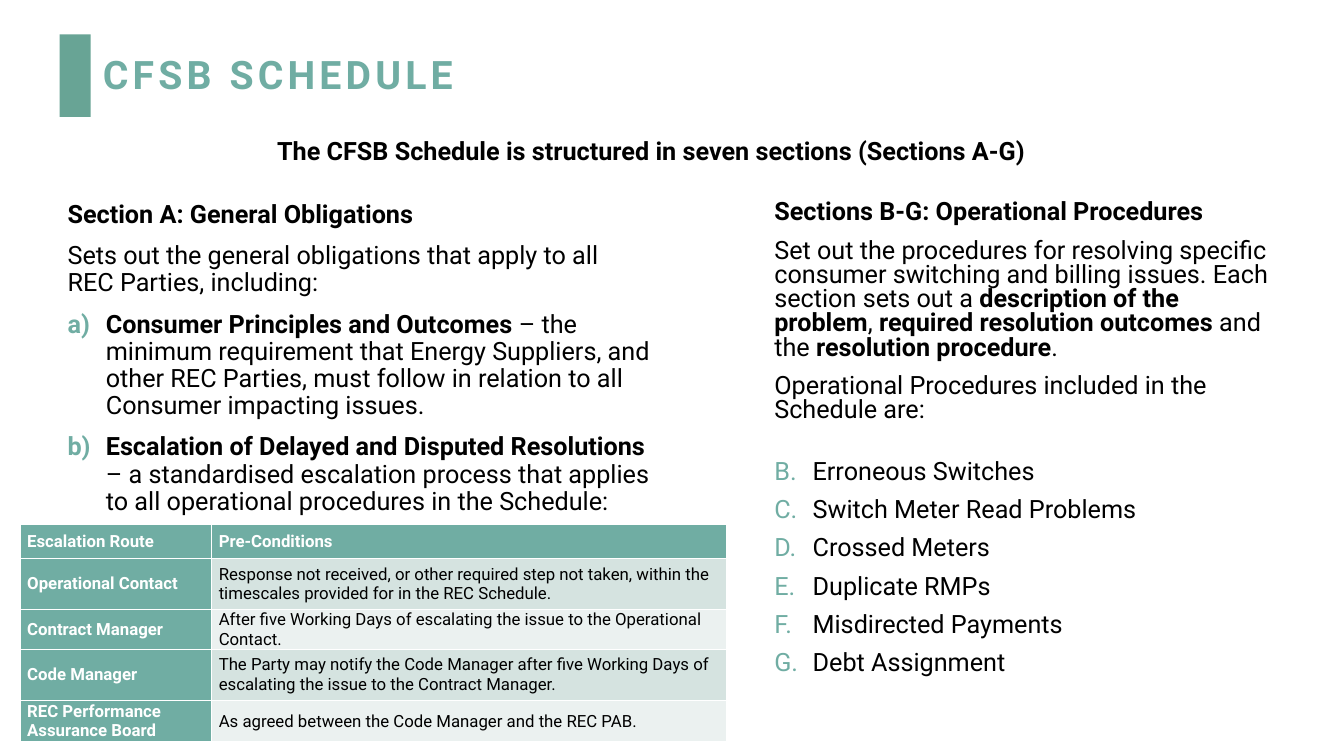
"""Builds the CFSB Schedule slide with its section texts and escalation table."""
from lxml import etree
from pptx import Presentation, util as u
from pptx.dml.color import RGBColor
from pptx.enum import shapes, text
from pptx.oxml import ns

PX = 9144
FONT = "Roboto"
COLORS = {
    "accent": "68A495",
    "teal": "70ADA3",
    "band_dark": "D5E3E0",
    "band_light": "EBF1F0",
    "black": "000000",
    "white": "FFFFFF",
}
BODY_SIZE = 18
HANGING = 38

SECTION_A = [
    ([("Section A: General Obligations", True)], None),
    ([("Sets out the general obligations that apply to all REC Parties, including:", False)], None),
    ([("Consumer Principles and Outcomes", True),
      (" – the minimum requirement that Energy Suppliers, and other REC Parties, must follow "
       "in relation to all Consumer impacting issues.", False)], ("alphaLcParenR", 1)),
    ([("Escalation of Delayed and Disputed Resolutions", True),
      (" – a standardised escalation process that applies to all operational procedures "
       "in the Schedule:", False)], ("alphaLcParenR", 1)),
]
PROCEDURES = ["Erroneous Switches", "Switch Meter Read Problems", "Crossed Meters",
              "Duplicate RMPs", "Misdirected Payments", "Debt Assignment"]
SECTIONS_B_TO_G = [
    ([("Sections B-G: Operational Procedures", True)], None),
    ([("Set out the procedures for resolving specific consumer switching and billing issues. "
       "Each section sets out a ", False),
      ("description of the problem", True), (", ", False),
      ("required resolution outcomes ", True), ("and the ", False),
      ("resolution procedure", True), (".", False)], None),
    ([("Operational Procedures included in the Schedule are:", False)], None),
] + [([(procedure, False)], ("alphaUcPeriod", 2)) for procedure in PROCEDURES]

ESCALATION = [
    ("Escalation Route", "Pre-Conditions"),
    ("Operational Contact", "Response not received, or other required step not taken, "
     "within the timescales provided for in the REC Schedule."),
    ("Contract Manager", "After five Working Days of escalating the issue to the "
     "Operational Contact."),
    ("Code Manager", "The Party may notify the Code Manager after five Working Days of "
     "escalating the issue to the Contract Manager."),
    ("REC Performance Assurance Board", "As agreed between the Code Manager and the REC PAB."),
]
COLUMN_WIDTHS = [190, 511]
ROW_HEIGHTS = [34, 51, 36, 51, 41]


def px(*lengths):
    return [u.Emu(length * PX) for length in lengths]


def color(name):
    return RGBColor.from_string(COLORS[name])


def place(shape, left, top, width, height):
    shape.left, shape.top, shape.width, shape.height = px(left, top, width, height)


def set_font(paragraph, size, color_name, bold=None):
    font = paragraph.font
    font.name, font.size, font.bold = FONT, u.Pt(size), bold
    font.color.rgb = color(color_name)


def set_bullet(paragraph, numbering):
    properties = paragraph._p.get_or_add_pPr()
    indent = HANGING * PX if numbering else 0
    properties.set("marL", str(indent))
    properties.set("indent", str(-indent))
    if not numbering:
        etree.SubElement(properties, ns.qn("a:buNone"))
        return
    style, start = numbering
    bullet_color = etree.SubElement(properties, ns.qn("a:buClr"))
    etree.SubElement(bullet_color, ns.qn("a:srgbClr"), val=COLORS["teal"])
    etree.SubElement(properties, ns.qn("a:buFont"), typeface="+mj-lt")
    etree.SubElement(properties, ns.qn("a:buAutoNum"), type=style, startAt=str(start))


def fill_body(shape, content, line_spacing, list_gap=10):
    frame = shape.text_frame
    frame.word_wrap = True
    frame.auto_size = text.MSO_AUTO_SIZE.NONE
    previous = None
    for index, (runs, numbering) in enumerate(content):
        paragraph = frame.paragraphs[0] if index == 0 else frame.add_paragraph()
        starts_list = numbering and not previous
        paragraph.line_spacing = line_spacing
        paragraph.space_before = u.Pt(0 if index == 0 else list_gap if starts_list else 10)
        set_bullet(paragraph, numbering)
        set_font(paragraph, BODY_SIZE, "black")
        for words, bold in runs:
            run = paragraph.add_run()
            run.text, run.font.bold = words, bold
        previous = numbering


def add_accent(slide):
    bar = slide.shapes.add_shape(shapes.MSO_SHAPE.RECTANGLE, *px(59, 34, 31, 82))
    bar.shadow.inherit = False
    bar.fill.solid()
    bar.fill.fore_color.rgb = color("accent")
    bar.line.fill.background()


def fill_title(title):
    place(title, 92, 40, 1015, 72)
    frame = title.text_frame
    frame.auto_size = text.MSO_AUTO_SIZE.NONE
    frame.vertical_anchor = text.MSO_ANCHOR.MIDDLE
    paragraph = frame.paragraphs[0]
    paragraph.alignment = text.PP_ALIGN.LEFT
    paragraph.line_spacing = 0.9
    set_font(paragraph, 28, "teal", True)
    run = paragraph.add_run()
    run.text = "CFSB SCHEDULE"
    run._r.get_or_add_rPr().set("spc", "300")


def fill_cell(cell, words, fill, font_color, bold):
    cell.fill.solid()
    cell.fill.fore_color.rgb = color(fill)
    cell.vertical_anchor = text.MSO_ANCHOR.MIDDLE
    cell.margin_left, cell.margin_right, cell.margin_top, cell.margin_bottom = px(7, 7, 0, 0)
    cell.text = words
    set_font(cell.text_frame.paragraphs[0], 12, font_color, bold)


def add_escalation_table(slide):
    table = slide.shapes.add_table(
        len(ESCALATION), len(COLUMN_WIDTHS),
        *px(20, 520, sum(COLUMN_WIDTHS), sum(ROW_HEIGHTS))).table
    table.first_col = True
    for column, width in zip(table.columns, px(*COLUMN_WIDTHS)):
        column.width = width
    for row, height in zip(table.rows, px(*ROW_HEIGHTS)):
        row.height = height
    for r, row in enumerate(ESCALATION):
        for c, words in enumerate(row):
            heading = r == 0 or c == 0
            band = "band_dark" if r % 2 else "band_light"
            fill_cell(table.cell(r, c), words, "teal" if heading else band,
                      "white" if heading else "black", heading)


def main():
    presentation = Presentation()
    presentation.slide_width, presentation.slide_height = px(1333, 750)
    slide = presentation.slides.add_slide(presentation.slide_layouts[3])
    title, left_body, right_body = slide.placeholders
    add_accent(slide)
    fill_title(title)
    place(left_body, 57, 195, 598, 488)
    fill_body(left_body, SECTION_A, 0.9)
    introduction = slide.shapes.add_textbox(*px(265, 133, 805, 45))
    fill_body(introduction, [
        ([("The CFSB Schedule is structured in seven sections (Sections A-G)", True)], None)], 0.9)
    place(right_body, 758, 195, 513, 488)
    fill_body(right_body, SECTIONS_B_TO_G, 0.8, list_gap=27)
    add_escalation_table(slide)
    presentation.save("out.pptx")


if __name__ == "__main__":
    main()
